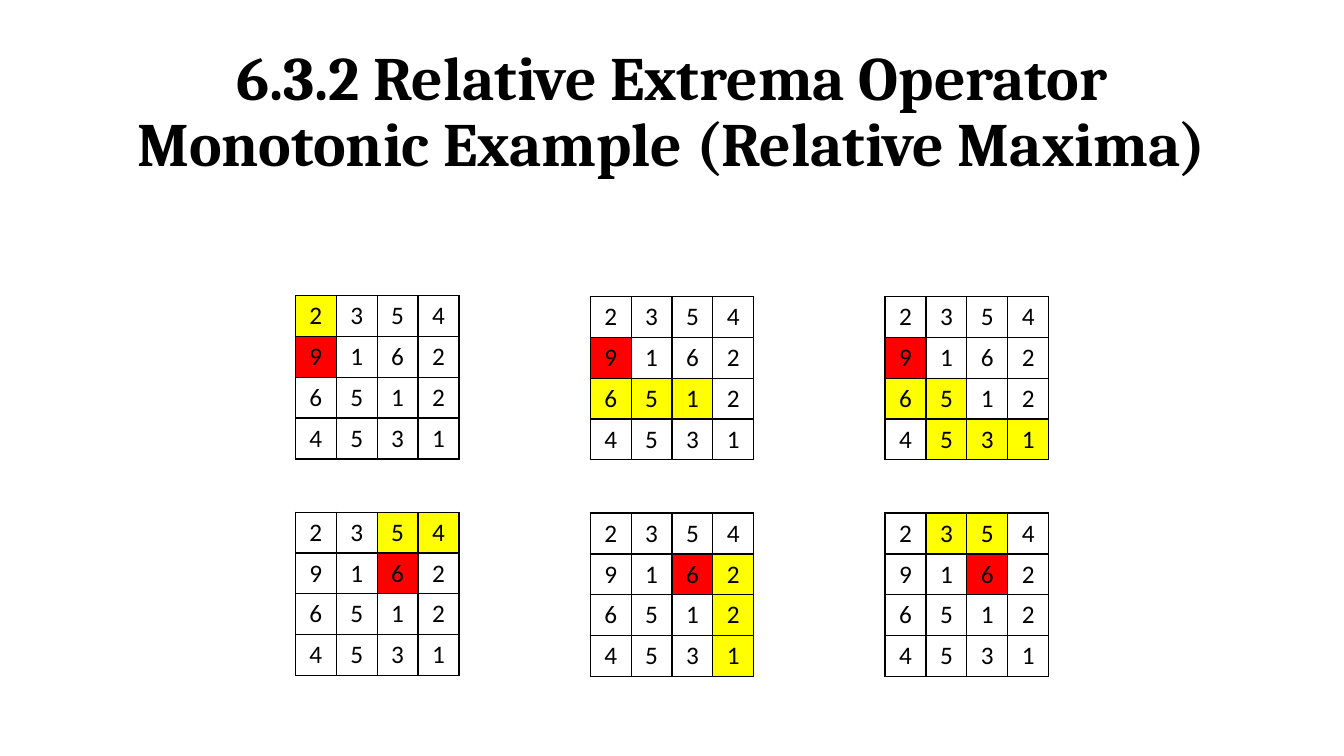
from lxml import etree
from pptx import Presentation
from pptx.dml.color import RGBColor
from pptx.enum.text import MSO_ANCHOR, PP_ALIGN
from pptx.oxml.ns import qn
from pptx.util import Pt

MIDDLE = MSO_ANCHOR.MIDDLE
CENTER = PP_ALIGN.CENTER
COLORS = {"ink": "000000", "plain": "FFFFFF", "peak": "FF0000", "path": "FFFF00"}
MARKS = {".": "plain", "R": "peak", "Y": "path"}
VALUES = ["2354", "9162", "6512", "4531"]
# Each grid has one word per row: R marks the maximum, Y the path, . the rest.
GRIDS = [
    ["Y... R... .... ....", ".... R... YYY. ....", ".... R... YY.. .YYY"],
    ["..YY ..R. .... ....", ".... ..RY ...Y ...Y", ".YY. ..R. .... ...."],
]
TITLE = "6.3.2 Relative Extrema Operator\vMonotonic Example (Relative Maxima)"
CELL = 29.2


def color(name):
    return RGBColor.from_string(COLORS[name])


def style(para, font, size, bold=False):
    para.alignment = CENTER
    for run in para.runs:
        run.font.name = font
        run.font.size = Pt(size)
        run.font.bold = bold
        run.font.color.rgb = color("ink")


def add_title(slide, left, top, width, height):
    box = slide.shapes.add_textbox(Pt(left), Pt(top), Pt(width), Pt(height))
    frame = box.text_frame
    frame.word_wrap = True
    frame.vertical_anchor = MIDDLE
    para = frame.paragraphs[0]
    para.text = TITLE
    para.line_spacing = 0.9
    style(para, "Cambria", 44, True)


def add_edges(cell):
    """Draw a thin line on all four sides, ahead of the fill in the XML."""
    props = cell._tc.get_or_add_tcPr()
    for spot, side in enumerate(("lnL", "lnR", "lnT", "lnB")):
        line = etree.Element(qn("a:" + side), w=str(Pt(1)))
        fill = etree.SubElement(line, qn("a:solidFill"))
        etree.SubElement(fill, qn("a:srgbClr"), val=COLORS["ink"])
        props.insert(spot, line)


def set_cell(cell, value, mark):
    cell.fill.solid()
    cell.fill.fore_color.rgb = color(MARKS[mark])
    cell.margin_left = cell.margin_right = Pt(3)
    cell.margin_top = cell.margin_bottom = Pt(3)
    cell.vertical_anchor = MIDDLE
    para = cell.text_frame.paragraphs[0]
    para.text = value
    style(para, "Calibri", 18)
    add_edges(cell)


def add_grid(slide, left, top, marks):
    size = len(VALUES)
    side = Pt(CELL * size)
    table = slide.shapes.add_table(size, size, Pt(left), Pt(top), side, side).table
    table.first_row = False
    table.horz_banding = False
    for row, (values, line) in enumerate(zip(VALUES, marks.split())):
        table.rows[row].height = Pt(CELL)
        table.columns[row].width = Pt(CELL)
        for col, (value, mark) in enumerate(zip(values, line)):
            set_cell(table.cell(row, col), value, mark)


def add_grids(slide, left, top, wide, high):
    """Lay out the grids; the first column sits slightly higher."""
    for row, grids in enumerate(GRIDS):
        for col, marks in enumerate(grids):
            lift = 0.7 if col == 0 else 0
            add_grid(slide, left + col * wide, top + row * high - lift, marks)


def main():
    deck = Presentation()
    deck.slide_width, deck.slide_height = Pt(960), Pt(540)
    slide = deck.slides.add_slide(deck.slide_layouts[6])
    add_grids(slide, left=211, top=211.7, wide=210.6, high=154.8)
    add_title(slide, 66, 28.8, 828, 104.4)
    deck.save("out.pptx")


if __name__ == "__main__":
    main()
